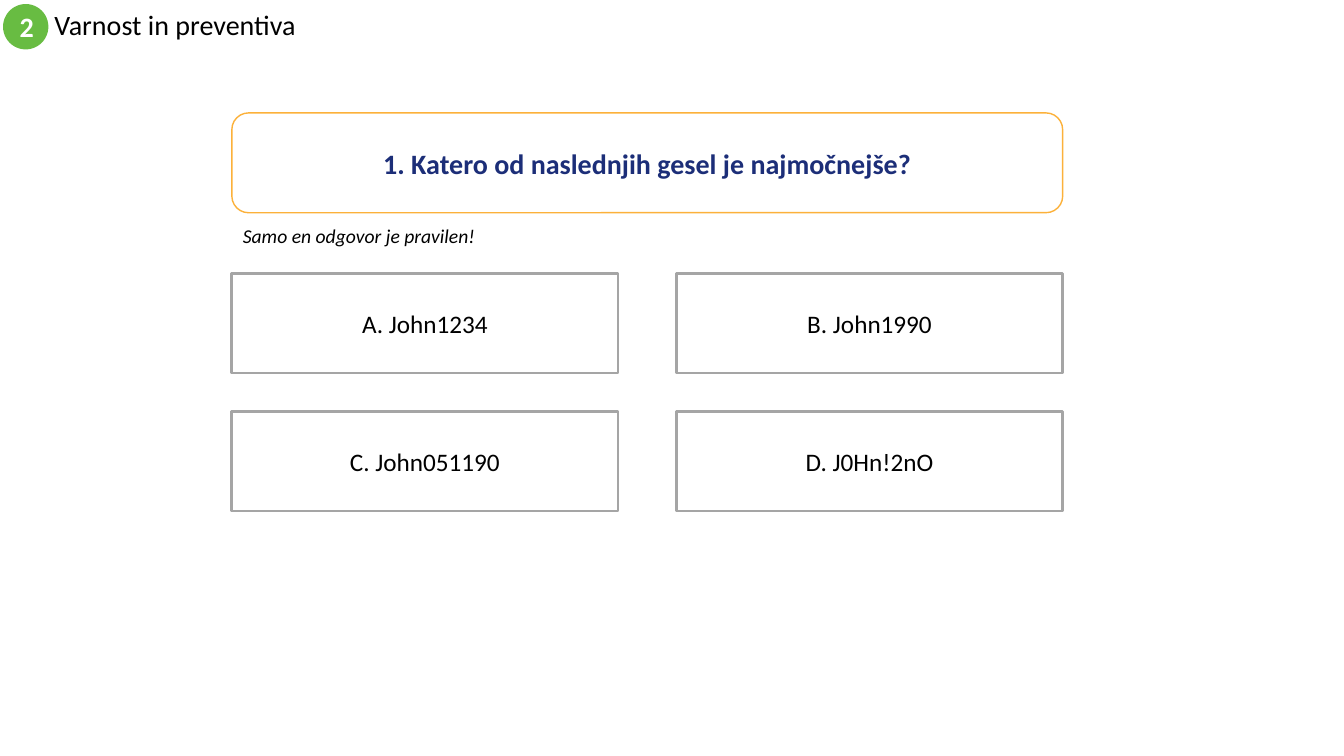
from dataclasses import dataclass
from typing import Optional

from pptx import Presentation
from pptx.dml.color import RGBColor
from pptx.enum import shapes, text
from pptx.util import Inches, Pt

FONT = "Calibri"
LEFT, COLUMN_STEP = 2.3, 4.41
TOP, ROW_STEP = 2.71, 1.37
ANSWER_WIDTH, BOX_HEIGHT = 3.83, 0.99
ANSWERS = ["A. John1234", "B. John1990", "C. John051190", "D. J0Hn!2nO"]


@dataclass
class Box:
    label: str
    left: float
    top: float
    width: float
    height: float
    kind: shapes.MSO_SHAPE = shapes.MSO_SHAPE.RECTANGLE
    fill: str = "FFFFFF"
    line: Optional[str] = "A5A5A5"
    line_width: float = 2
    size: float = 18
    color: str = "000000"
    bold: bool = False


def rgb(value: str) -> RGBColor:
    return RGBColor.from_string(value)


def write(tf, label: str, *, size: float, color: str = "000000",
          bold: bool = False, italic: bool = False,
          align=text.PP_ALIGN.LEFT, anchor=text.MSO_ANCHOR.MIDDLE,
          spacing: float = 1.0) -> None:
    tf.word_wrap = True
    tf.auto_size = text.MSO_AUTO_SIZE.NONE
    tf.vertical_anchor = anchor
    p = tf.paragraphs[0]
    p.alignment = align
    p.line_spacing = spacing
    p.space_before = Pt(0)
    r = p.add_run()
    r.text = label
    r.font.name = FONT
    r.font.size = Pt(size)
    r.font.bold = bold
    r.font.italic = italic
    r.font.color.rgb = rgb(color)


def draw_box(s, box: Box) -> None:
    sp = s.shapes.add_shape(box.kind, Inches(box.left), Inches(box.top),
                            Inches(box.width), Inches(box.height))
    sp.shadow.inherit = False
    sp.fill.solid()
    sp.fill.fore_color.rgb = rgb(box.fill)
    if box.line:
        sp.line.color.rgb = rgb(box.line)
        sp.line.width = Pt(box.line_width)
    else:
        sp.line.fill.background()
    write(sp.text_frame, box.label, size=box.size, color=box.color,
          bold=box.bold, align=text.PP_ALIGN.CENTER)


def main() -> None:
    prs = Presentation()
    prs.slide_width, prs.slide_height = Inches(13.33), Inches(7.5)
    s = prs.slides.add_slide(prs.slide_layouts[5])

    # Section title and number
    title = s.shapes.title
    title.left, title.top = Inches(0.44), Inches(0.04)
    title.width, title.height = Inches(8), Inches(0.45)
    write(title.text_frame, "Varnost in preventiva", size=20, spacing=0.9)
    draw_box(s, Box("2", 0.03, 0.04, 0.45, 0.45, shapes.MSO_SHAPE.OVAL,
                    fill="68BC42", line=None, size=20, color="FFFFFF", bold=True))

    # Question and hint
    draw_box(s, Box("1. Katero od naslednjih gesel je najmočnejše?",
                    LEFT, 1.12, COLUMN_STEP + ANSWER_WIDTH, BOX_HEIGHT,
                    shapes.MSO_SHAPE.ROUNDED_RECTANGLE, line="FCB13A",
                    line_width=1, size=20, color="1C2E78", bold=True))
    hint = s.shapes.add_textbox(Inches(2.31), Inches(2.17), Inches(3.56), Inches(0.34))
    write(hint.text_frame, "Samo en odgovor je pravilen!", size=14, italic=True,
          anchor=text.MSO_ANCHOR.TOP)

    # Answers in a two-column grid
    for i, answer in enumerate(ANSWERS):
        row, column = divmod(i, 2)
        draw_box(s, Box(answer, LEFT + column * COLUMN_STEP, TOP + row * ROW_STEP,
                        ANSWER_WIDTH, BOX_HEIGHT))

    prs.save("out.pptx")


if __name__ == "__main__":
    main()
